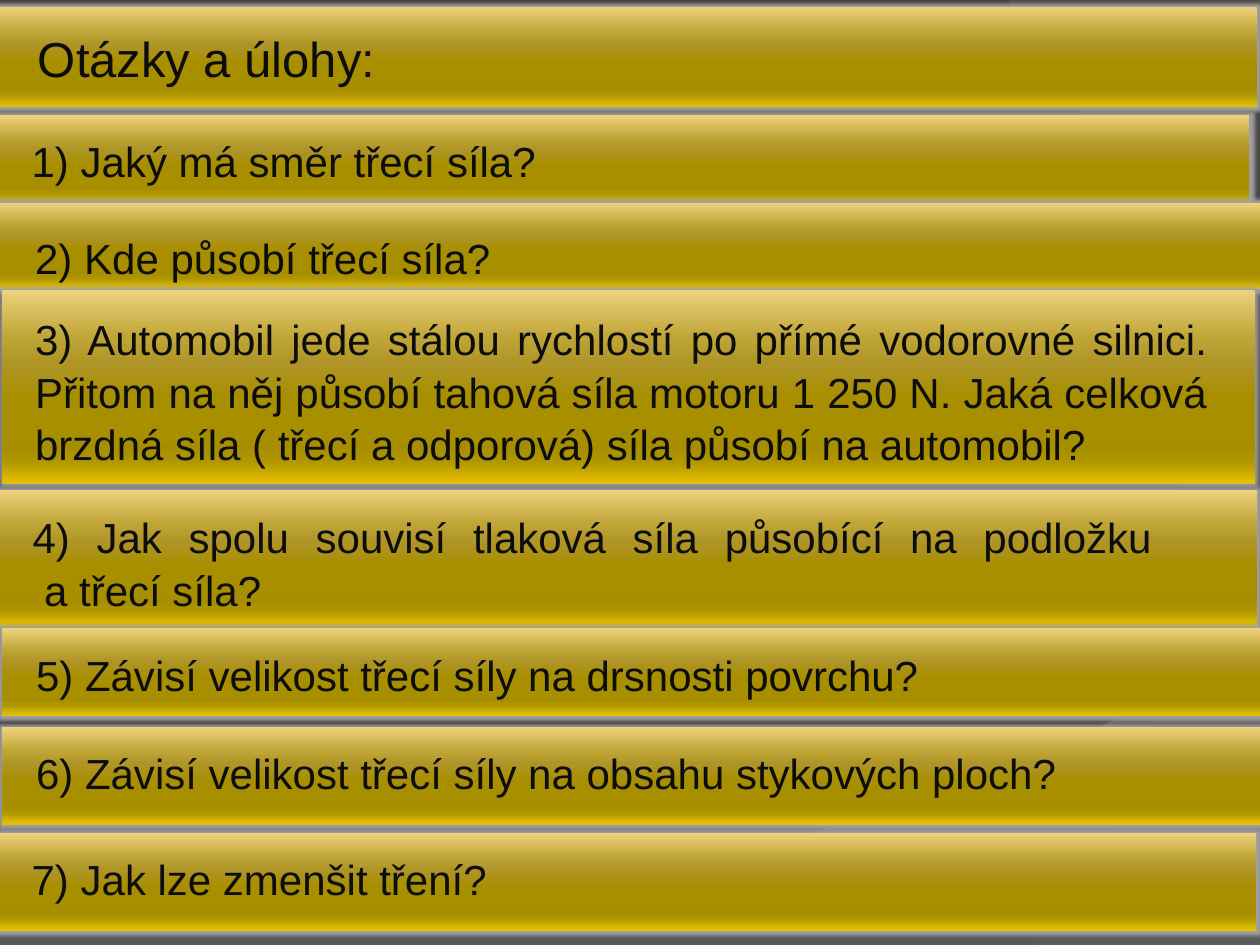
from lxml import etree
from pptx import Presentation
from pptx import util as u
from pptx.dml.color import RGBColor
from pptx.enum import shapes, text
from pptx.oxml import parse_xml
from pptx.oxml.ns import qn

NS = 'xmlns:a="http://schemas.openxmlformats.org/drawingml/2006/main"'
GOLD = [(0, "EED27E"), (25, "BFA536"), (38, "AF9527"), (55, "A88F00"),
        (80, "A68D00"), (88, "AF9500"), (100, "E6C100")]

TITLE = ("Otázky a úlohy:", (-1, 4, 719, 57), (14.5, 11, 212, 45))
# text, bar box, text box
QUESTIONS = [
    ("1) Jaký má směr třecí síla?",
     (-2, 66, 716, 51), (11, 72.5, 685, 38)),
    ("2) Kde působí třecí síla?",
     (-2, 116, 722, 49), (13, 128, 669, 38)),
    ("3) Automobil jede stálou rychlostí po přímé vodorovné silnici. "
     "Přitom na něj působí tahová síla motoru 1 250 N. Jaká celková "
     "brzdná síla ( třecí a odporová) síla působí na automobil?",
     (1, 165.5, 716, 111), (13, 174, 684, 104)),
    ("4) Jak spolu souvisí tlaková síla působící na podložku \v a třecí síla?",
     (-1.5, 280, 720, 78), (11.5, 287.5, 669, 67)),
    ("5) Závisí velikost třecí síly na drsnosti povrchu?",
     (1, 359, 720, 50), (13.5, 366, 669, 38)),
    ("6) Závisí velikost třecí síly na obsahu stykových ploch?",
     (1, 415.5, 720, 55.5), (13.5, 422, 669, 38)),
    ("7) Jak lze zmenšit tření?",
     (-2, 476, 720, 55.5), (11, 482.5, 669, 38)),
]


def rgb(value):
    return RGBColor.from_string(value)


def bezier(p0, p1, p2, p3, steps=32):
    """Points on a cubic curve, both ends included."""
    points = []
    for i in range(steps + 1):
        t = i / steps
        weights = ((1 - t) ** 3, 3 * t * (1 - t) ** 2, 3 * t * t * (1 - t), t ** 3)
        points.append(tuple(sum(w * p[axis] for w, p in zip(weights, (p0, p1, p2, p3)))
                            for axis in (0, 1)))
    return points


class Deck:
    font = "Arial"
    ink = "0D0D0D"
    halo = "A0A0A0"

    def __init__(self):
        self.prs = Presentation()
        self.prs.slide_width, self.prs.slide_height = u.Pt(720), u.Pt(540)
        self.s = self.prs.slides.add_slide(self.prs.slide_layouts[5])

    def background(self, color):
        fill = self.s.background.fill
        fill.solid()
        fill.fore_color.rgb = rgb(color)

    def swoosh(self, points, color, opacity):
        fb = self.s.shapes.build_freeform(*points[0], scale=u.Pt(1))
        fb.add_line_segments(points[1:], close=True)
        sp = fb.convert_to_shape()
        sp.shadow.inherit = False
        sp.line.fill.background()
        sp.fill.solid()
        sp.fill.fore_color.rgb = rgb(color)
        clr = sp.element.spPr.find(qn("a:solidFill"))[0]
        etree.SubElement(clr, qn("a:alpha")).set("val", str(opacity * 1000))

    def bar(self, box):
        """Gold gradient bar with a soft grey halo."""
        sp = self.s.shapes.add_shape(shapes.MSO_SHAPE.ROUNDED_RECTANGLE, *map(u.Pt, box))
        sp.adjustments[0] = 0
        sp.line.fill.background()
        stops = "".join(f'<a:gs pos="{pos * 1000}"><a:srgbClr val="{c}"/></a:gs>'
                        for pos, c in GOLD)
        geom = sp.element.spPr.find(qn("a:prstGeom"))
        geom.addnext(parse_xml(f'<a:gradFill {NS} rotWithShape="1"><a:gsLst>{stops}</a:gsLst>'
                               '<a:lin ang="5400000" scaled="0"/></a:gradFill>'))
        sp.element.spPr.append(parse_xml(
            f'<a:effectLst {NS}><a:glow rad="{u.Pt(4)}"><a:srgbClr val="{self.halo}"/>'
            '</a:glow></a:effectLst>'))

    def set_text(self, sp, words, size):
        tf = sp.text_frame
        tf.word_wrap = True
        tf.auto_size = text.MSO_AUTO_SIZE.NONE
        tf.vertical_anchor = text.MSO_ANCHOR.TOP
        p = tf.paragraphs[0]
        p.text = words
        p.alignment = text.PP_ALIGN.JUSTIFY
        p.line_spacing = 1.05
        for r in p.runs:
            r.font.name, r.font.size = self.font, u.Pt(size)
            r.font.color.rgb = rgb(self.ink)

    def question(self, words, box):
        self.set_text(self.s.shapes.add_textbox(*map(u.Pt, box)), words, 24)

    def title(self, words, box):
        sp = self.s.shapes.title
        sp.left, sp.top, sp.width, sp.height = map(u.Pt, box)
        self.set_text(sp, words, 28)
        sp.element.getparent().append(sp.element)  # in front of its bar


def main():
    deck = Deck()
    deck.background("3B3B3B")
    deck.swoosh([(0, 540), (720, 540)]
                + bezier((720, 374), (402, 525), (282, 518), (0, 508)), "7F7F7F", 45)
    deck.swoosh([(720, 0), (720, 540)]
                + bezier((591, 540), (673, 446), (733, 216), (576, 0)), "5E5E5E", 40)

    words, bar_box, text_box = TITLE
    deck.bar(bar_box)
    deck.title(words, text_box)
    for words, bar_box, text_box in QUESTIONS:
        deck.bar(bar_box)
        deck.question(words, text_box)
    deck.prs.save("out.pptx")


if __name__ == "__main__":
    main()
